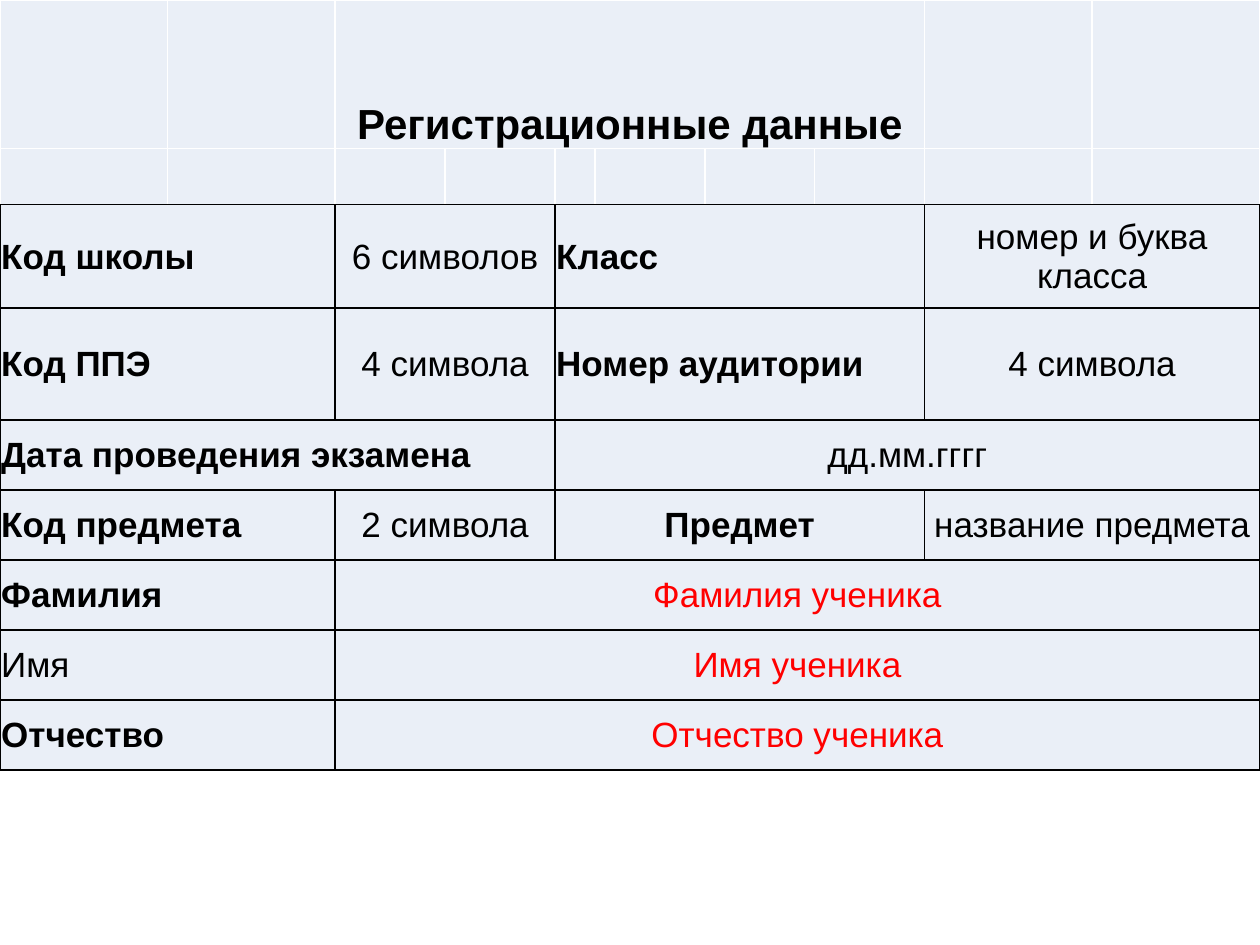
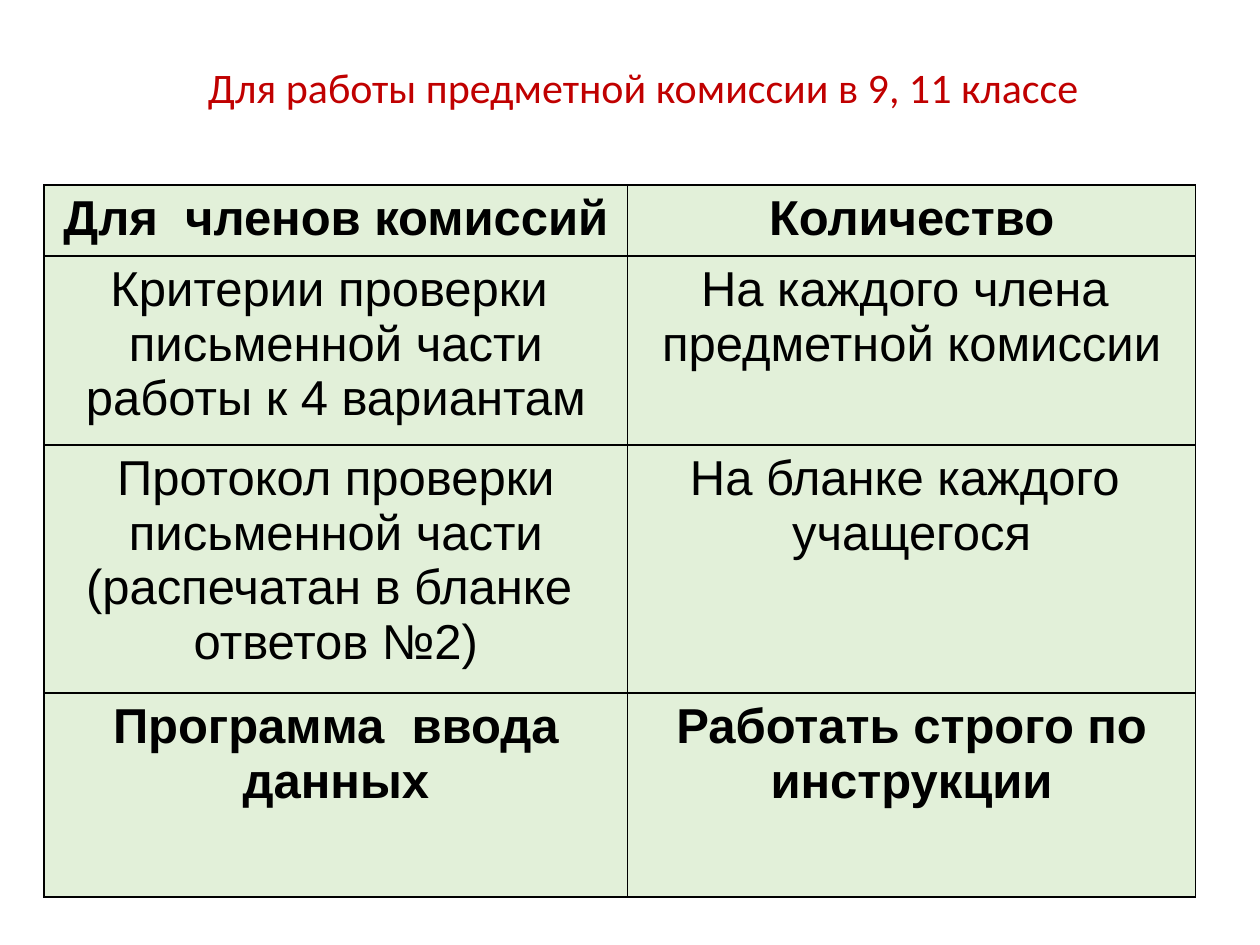
from lxml import etree
from pptx import Presentation
from pptx import util as u
from pptx.dml.color import RGBColor
from pptx.enum import text as t
from pptx.oxml import ns

BLACK, WHITE, RED, DARK_RED = "000000", "FFFFFF", "FF0000", "C00000"
PALE_BLUE, PALE_GREEN = "EAEFF7", "E2F0D9"
LEFT, CENTER = t.PP_ALIGN.LEFT, t.PP_ALIGN.CENTER
TOP, MIDDLE, BOTTOM = t.MSO_ANCHOR.TOP, t.MSO_ANCHOR.MIDDLE, t.MSO_ANCHOR.BOTTOM
TITLE_ONLY, BLANK = 5, 6
TIGHT = {"left": 0.7, "top": 0.7, "right": 0.7, "bottom": 0}
ROOMY = {"left": 7.2, "top": 3.6, "right": 7.2, "bottom": 3.6}

FORM_COLUMNS = [95.8] * 2 + [62.8] * 2 + [22.8] + [62.8] * 3 + [95.8] * 2
FORM_ROWS = [85, 32, 59, 64] + [40] * 5
LABEL = {"bold": True, "align": LEFT}
PLAIN_LABEL = {"align": LEFT}
STUDENT = {"color": RED}
FORM_ENTRIES = [
    (0, 2, 6, "Регистрационные данные", {"bold": True, "size": 24, "anchor": BOTTOM}),
    (2, 0, 2, "Код школы", LABEL),
    (2, 2, 2, "6 символов", {}),
    (2, 4, 4, "Класс", LABEL),
    (2, 8, 2, "номер и буква класса", {}),
    (3, 0, 2, "Код ППЭ", LABEL),
    (3, 2, 2, "4 символа", {}),
    (3, 4, 4, "Номер аудитории", LABEL),
    (3, 8, 2, "4 символа", {}),
    (4, 0, 4, "Дата проведения экзамена", LABEL),
    (4, 4, 6, "дд.мм.гггг", {}),
    (5, 0, 2, "Код предмета", LABEL),
    (5, 2, 2, "2 символа", {}),
    (5, 4, 4, "Предмет", {"bold": True}),
    (5, 8, 2, "название предмета", {}),
    (6, 0, 2, "Фамилия", LABEL),
    (6, 2, 8, "Фамилия ученика", STUDENT),
    (7, 0, 2, "Имя", PLAIN_LABEL),
    (7, 2, 8, "Имя ученика", STUDENT),
    (8, 0, 2, "Отчество", LABEL),
    (8, 2, 8, "Отчество ученика", STUDENT),
]

COMMISSION_COLUMNS = [333.4, 324.7]
COMMISSION_ROWS = [40.6, 108, 141.7, 116.6]
COMMISSION_TEXTS = [
    ("Для  членов комиссий", "Количество"),
    ("Критерии проверки  письменной части работы к 4 вариантам",
     "На каждого члена  предметной комиссии"),
    ("Протокол проверки письменной части (распечатан в бланке  ответов №2)",
     "На бланке каждого  учащегося"),
    ("Программа  ввода данных", "Работать строго по инструкции"),
]


def color(value):
    return RGBColor.from_string(value)


def place(item, box):
    for name, value in zip(("left", "top", "width", "height"), box):
        setattr(item, name, u.Pt(value))


def write(para, content, size, font="Arial", ink=BLACK, bold=False, align=CENTER):
    para.alignment = align
    span = para.add_run()
    span.text = content
    for name, value in {"size": u.Pt(size), "name": font, "bold": bold}.items():
        setattr(span.font, name, value)
    span.font.color.rgb = color(ink)


def draw_borders(cell, inks):
    properties = cell._tc.get_or_add_tcPr()
    for side, ink in zip("LRTB", inks):
        line = etree.SubElement(properties, ns.qn(f"a:ln{side}"), w=str(u.Pt(1)))
        fill = etree.SubElement(line, ns.qn("a:solidFill"))
        etree.SubElement(fill, ns.qn("a:srgbClr"), val=ink)


def add_grid(page, box, columns, rows, fill, border_rule):
    place_box = [u.Pt(value) for value in (*box, sum(columns), sum(rows))]
    table = page.shapes.add_table(len(rows), len(columns), *place_box).table
    table.first_row = table.horz_banding = False
    for column, width in zip(table.columns, columns):
        column.width = u.Pt(width)
    for index, (row, height) in enumerate(zip(table.rows, rows)):
        row.height = u.Pt(height)
        for cell in row.cells:
            draw_borders(cell, border_rule(index))
            cell.fill.solid()
            cell.fill.fore_color.rgb = color(fill)
    return table


def fill_cell(cell, content, size, margins, anchor, **style):
    for side, value in margins.items():
        setattr(cell, f"margin_{side}", u.Pt(value))
    cell.vertical_anchor = anchor
    write(cell.text_frame.paragraphs[0], content, size, **style)


def form_borders(row):
    if row == 0:
        return [WHITE] * 4
    if row == 1:
        return [WHITE] * 3 + [BLACK]
    return [BLACK] * 4


def add_registration_form(page, box):
    table = add_grid(page, box, FORM_COLUMNS, FORM_ROWS, PALE_BLUE, form_borders)
    for row, column, width, content, style in FORM_ENTRIES:
        cell = table.cell(row, column)
        cell.merge(table.cell(row, column + width - 1))
        fill_cell(cell, content, style.get("size", 20), TIGHT,
                  style.get("anchor", MIDDLE), ink=style.get("color", BLACK),
                  bold=style.get("bold", False), align=style.get("align", CENTER))


def add_commission_table(page, box):
    table = add_grid(page, box, COMMISSION_COLUMNS, COMMISSION_ROWS, PALE_GREEN,
                     lambda row: [BLACK] * 4)
    last = len(COMMISSION_TEXTS) - 1
    for row, contents in enumerate(COMMISSION_TEXTS):
        for column, content in enumerate(contents):
            fill_cell(table.cell(row, column), content, 28, ROOMY, TOP,
                      bold=row in (0, last))


def format_title(page, box, content):
    title = page.shapes.title
    place(title, box)
    title.fill.solid()
    title.fill.fore_color.rgb = color(WHITE)
    title.text_frame.vertical_anchor = MIDDLE
    para = title.text_frame.paragraphs[0]
    para.line_spacing = 0.9
    write(para, content, 24, font="Calibri", ink=DARK_RED)


def main():
    deck = Presentation()
    deck.slide_width, deck.slide_height = u.Pt(720), u.Pt(540)

    page = deck.slides.add_slide(deck.slide_layouts[BLANK])
    add_registration_form(page, (0, 0))

    page = deck.slides.add_slide(deck.slide_layouts[TITLE_ONLY])
    format_title(page, (64.8, 25.9, 605.5, 51.1),
                 "Для работы предметной комиссии в 9, 11 классе")
    add_commission_table(page, (25.2, 105.8))

    deck.save("out.pptx")


if __name__ == "__main__":
    main()
